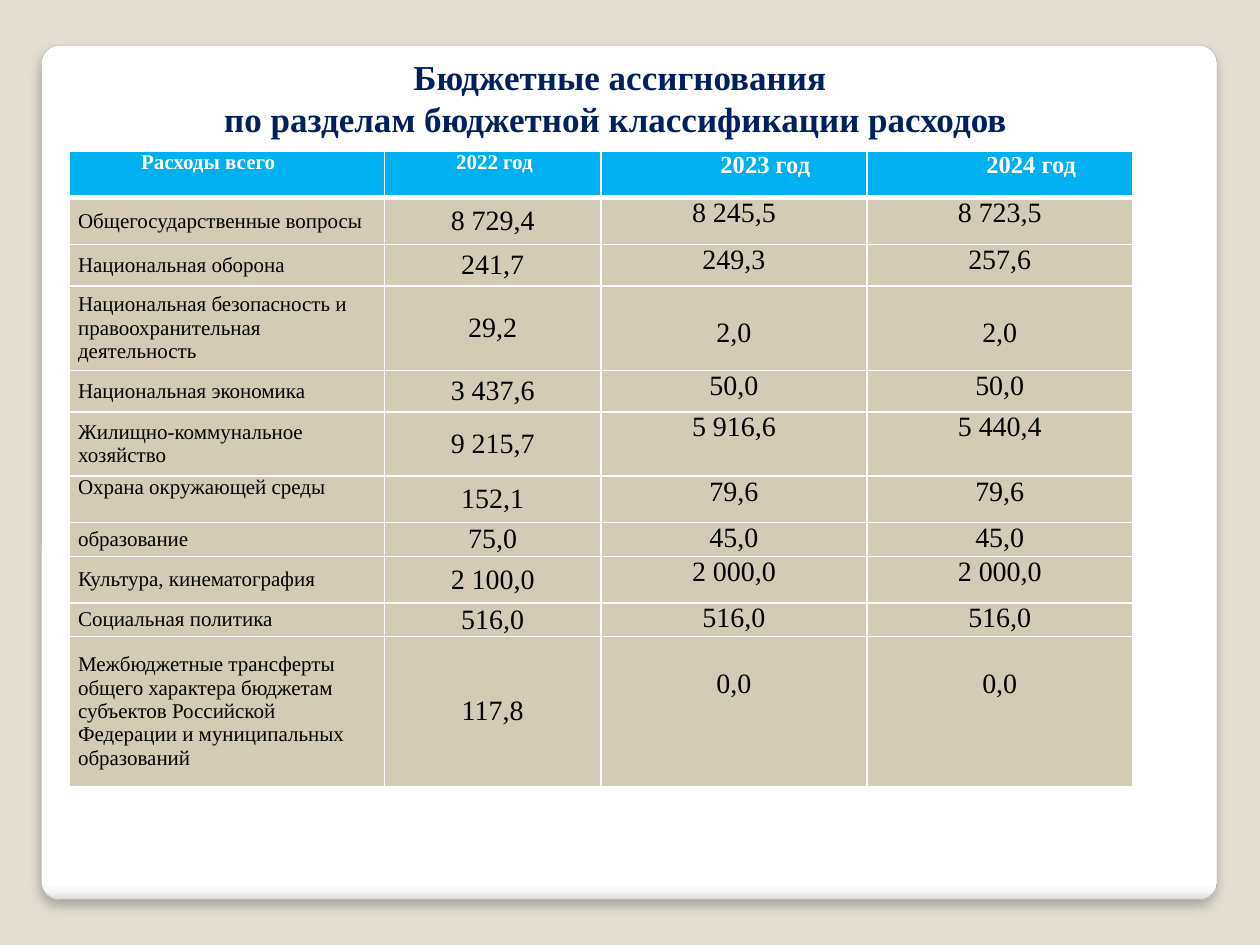
from lxml import etree
from pptx import Presentation, util as u
from pptx.dml.color import RGBColor
from pptx.enum import shapes, text
from pptx.oxml import parse_xml
from pptx.oxml.ns import nsdecls

FONT = "Times New Roman"
TITLE = "Бюджетные ассигнования\vпо разделам бюджетной классификации расходов "
HEAD = ["Расходы всего", "2022 год", "2023 год", "2024 год"]
ROWS = [
    (0.37, "Общегосударственные вопросы", "8 729,4", "8 245,5", "8 723,5"),
    (0.33, "Национальная оборона", "241,7", "249,3", "257,6"),
    (0.67, "Национальная безопасность и правоохранительная деятельность",
     "29,2", "2,0", "2,0"),
    (0.33, "Национальная экономика", "3 437,6", "50,0", "50,0"),
    (0.51, "Жилищно-коммунальное хозяйство", "9 215,7", "5 916,6", "5 440,4"),
    (0.37, "Охрана окружающей среды", "152,1", "79,6", "79,6"),
    (0.23, "образование", "75,0", "45,0", "45,0"),
    (0.37, "Культура, кинематография", "2 100,0", "2 000,0", "2 000,0"),
    (0.23, "Социальная политика", "516,0", "516,0", "516,0"),
    (1.19, "Межбюджетные трансферты общего характера бюджетам субъектов "
     "Российской Федерации и муниципальных образований",
     "117,8", "0,0", "0,0"),
]
GRID = [(0.37, *HEAD)] + ROWS
COLS = [2.5, 1.72, 2.11, 2.11]
LOW = (3, 10)
TOP = 6
STOPS = [(0, "FFFFFF"), (98, "FFFFFF"), (99, "F7F7F7"), (100, "DADADA")]


def rgb(code):
    return RGBColor.from_string(code)


def style(para, size, color, bold=False, align=None):
    font = para.font
    font.name, font.size, font.bold = FONT, u.Pt(size), bold
    font.color.rgb = rgb(color)
    para.alignment = align


def add_panel(slide):
    panel = slide.shapes.add_shape(
        shapes.MSO_SHAPE.ROUNDED_RECTANGLE,
        *map(u.Inches, (0.33, 0.36, 9.33, 6.78)))
    panel.adjustments[0] = 0.021
    panel.line.color.rgb = rgb("A4A4A4")
    panel.line.width = u.Pt(0.16)
    stops = "".join(
        f'<a:gs pos="{pos * 1000}"><a:srgbClr val="{code}"/></a:gs>'
        for pos, code in STOPS)
    props = panel.element.spPr
    props.find(".//{*}prstGeom").addnext(parse_xml(
        f'<a:gradFill {nsdecls("a")}><a:gsLst>{stops}</a:gsLst>'
        '<a:lin ang="5400000" scaled="0"/></a:gradFill>'))
    props.append(parse_xml(
        f'<a:effectLst {nsdecls("a")}><a:outerShdw blurRad="{u.Pt(6)}" '
        f'dist="{u.Pt(4)}" dir="5400000" rotWithShape="0">'
        '<a:srgbClr val="000000"><a:alpha val="25000"/></a:srgbClr>'
        '</a:outerShdw></a:effectLst>'))


def add_title(slide):
    box = slide.shapes.add_textbox(*map(u.Inches, (0.78, 0.39, 8.28, 0.77)))
    box.text_frame.word_wrap = True
    box.text_frame.text = TITLE
    style(box.text_frame.paragraphs[0], 20, "002060", True,
          text.PP_ALIGN.CENTER)


def set_edges(cell, row):
    props = cell._tc.get_or_add_tcPr()
    for side in "LRTB":
        thick = (row, side) in ((0, "B"), (1, "T"))
        props.append(parse_xml(
            f'<a:ln{side} {nsdecls("a")} w="{u.Pt(3 if thick else 1)}">'
            '<a:solidFill><a:srgbClr val="FFFFFF"/></a:solidFill>'
            f'</a:ln{side}>'))


def fill_cell(cell, row, col, words):
    head = row == 0
    set_edges(cell, row)
    cell.fill.solid()
    cell.fill.fore_color.rgb = rgb("00B0F0" if head else "D3CBB6")
    cell.margin_left = cell.margin_right = u.Inches(0.07)
    low = row in LOW and col > 1
    cell.margin_top = u.Inches(0.25 if low else 0)
    cell.margin_bottom = 0
    mid = not head and col < 2 and (row, col) != (TOP, 0)
    cell.vertical_anchor = (text.MSO_ANCHOR.MIDDLE if mid
                            else text.MSO_ANCHOR.TOP)
    cell.text = words
    para = cell.text_frame.paragraphs[0]
    if head:
        size = 12 if col < 2 else 14
        para._p.get_or_add_pPr().set("indent", str(u.Inches(0.5)))
    else:
        size = 16 if col else 12
    left = col < 2 if head else col == 0
    style(para, size, "FFFFFF" if head else "000000", head,
          text.PP_ALIGN.LEFT if left else text.PP_ALIGN.CENTER)


def add_grid(slide):
    high = sum(line[0] for line in GRID)
    table = slide.shapes.add_table(
        len(GRID), len(COLS),
        *map(u.Inches, (0.55, 1.2, sum(COLS), high))).table
    for col, wide in zip(table.columns, COLS):
        col.width = u.Inches(wide)
    for row, (tall, *cells) in enumerate(GRID):
        table.rows[row].height = u.Inches(tall)
        for col, words in enumerate(cells):
            fill_cell(table.cell(row, col), row, col, words)


def main():
    deck = Presentation()
    deck.slide_width, deck.slide_height = u.Inches(10), u.Inches(7.5)
    slide = deck.slides.add_slide(deck.slide_layouts[6])
    slide.background.fill.solid()
    slide.background.fill.fore_color.rgb = rgb("E3DED1")
    add_panel(slide)
    add_title(slide)
    add_grid(slide)
    deck.save("out.pptx")


if __name__ == "__main__":
    main()
